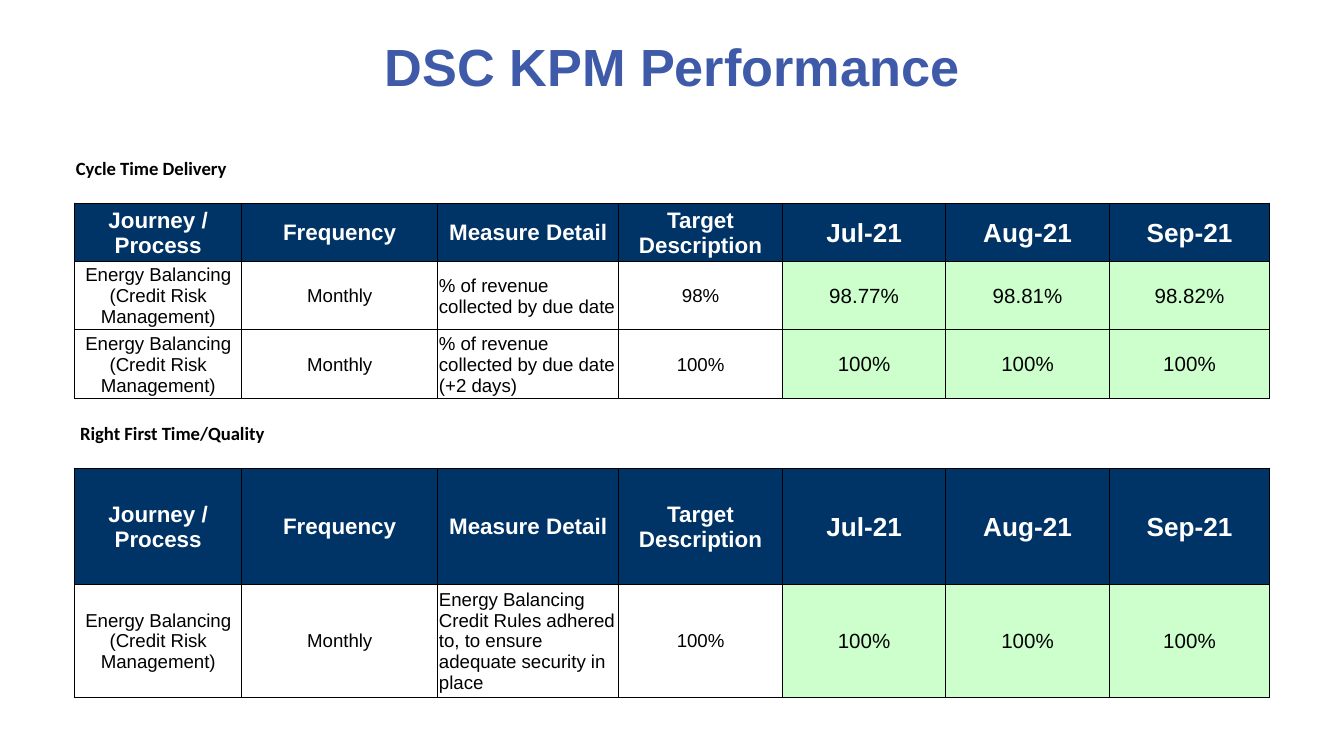
from lxml.etree import SubElement
from pptx import Presentation
from pptx.dml.color import RGBColor
from pptx.enum.text import MSO_ANCHOR as Anchor, PP_ALIGN as Align
from pptx.oxml.ns import qn
from pptx.util import Pt

BLUE = RGBColor(0x3E, 0x5A, 0xA8)
NAVY = RGBColor(0x00, 0x33, 0x66)
GREEN = RGBColor(0xCC, 0xFF, 0xCC)
WHITE = RGBColor(0xFF, 0xFF, 0xFF)
BLACK = RGBColor(0x00, 0x00, 0x00)

COLUMN_WIDTHS = [89.5, 105, 97, 87.75, 87.5, 87.75, 85.75]
FIRST_MONTH = 4
MEASURE = 2

HEADINGS = ["Journey / Process", "Frequency", "Measure Detail",
            "Target Description", "Jul-21", "Aug-21", "Sep-21"]
JOURNEY = ["Energy Balancing (Credit Risk Management)", "Monthly"]

ROWS = [
    ("label", 12.5, ["Cycle Time Delivery"]),
    ("space", 12.5, []),
    ("header", 31, HEADINGS),
    ("data", 36.5, JOURNEY + ["% of revenue collected by due date",
                              "98%", "98.77%", "98.81%", "98.82%"]),
    ("data", 36.5, JOURNEY + ["% of revenue collected by due date (+2 days)"]
     + ["100%"] * 4),
    ("space", 12.5, []),
    ("label", 12.5, [" Right First Time/Quality"]),
    ("space", 12.5, []),
    ("header", 61.75, HEADINGS),
    ("data", 60.5, JOURNEY + ["Energy Balancing Credit Rules adhered to, "
                              "to ensure adequate security in place"]
     + ["100%"] * 4),
]


class KpmSlide:
    def __init__(self, page):
        self.page = page

    def set_text(self, frame, text, size, color, bold, font="Arial", align=Align.CENTER):
        para = frame.paragraphs[0]
        para.text = text
        para.alignment = align
        para.font.name = font
        para.font.size = Pt(size)
        para.font.bold = bold
        para.font.color.rgb = color

    def title(self, text):
        box = self.page.shapes.add_textbox(Pt(36), Pt(10), Pt(648), Pt(50.5))
        frame = box.text_frame
        frame.word_wrap = True
        frame.vertical_anchor = Anchor.MIDDLE
        self.set_text(frame, text, 28, BLUE, True)

    def borders(self, cell, visible):
        properties = cell._tc.get_or_add_tcPr()
        for side, shown in zip(("L", "R", "T", "B"), visible):
            line = SubElement(properties, qn(f"a:ln{side}"), w=str(Pt(0.5)))
            if shown:
                fill = SubElement(line, qn("a:solidFill"))
                SubElement(fill, qn("a:srgbClr"), val=str(BLACK))
            else:
                SubElement(line, qn("a:noFill"))

    def cell(self, cell, kind, column, text):
        cell.margin_left = cell.margin_right = cell.margin_top = Pt(0.7)
        cell.margin_bottom = 0
        cell.vertical_anchor = Anchor.BOTTOM if kind == "label" else Anchor.MIDDLE
        month = column >= FIRST_MONTH
        frame = cell.text_frame
        if kind == "header":
            self.set_text(frame, text, 14 if month else 12, WHITE, True)
        elif kind == "data":
            align = Align.LEFT if column == MEASURE else Align.CENTER
            self.set_text(frame, text, 11 if month else 10, BLACK, False, align=align)
        elif text:
            self.set_text(frame, text, 10, BLACK, True, "Calibri", Align.LEFT)
        else:
            SubElement(frame.paragraphs[0]._p, qn("a:endParaRPr"), sz="800")
        if kind in ("label", "space"):
            cell.fill.background()
        else:
            cell.fill.solid()
            cell.fill.fore_color.rgb = (
                NAVY if kind == "header" else GREEN if month else WHITE)

    def table(self, left, top, widths, rows):
        heights = [height for _, height, _ in rows]
        table = self.page.shapes.add_table(
            len(rows), len(widths), Pt(left), Pt(top),
            Pt(sum(widths)), Pt(sum(heights))).table
        table.first_row = table.horz_banding = False
        for column, width in zip(table.columns, widths):
            column.width = Pt(width)
        ruled = [kind in ("header", "data") for kind, _, _ in rows] + [False]
        for index, (kind, height, texts) in enumerate(rows):
            table.rows[index].height = Pt(height)
            own = ruled[index]
            visible = (own, own, own or ruled[index - 1], own or ruled[index + 1])
            for column in range(len(widths)):
                cell = table.cell(index, column)
                self.borders(cell, visible)
                text = texts[column] if column < len(texts) else ""
                self.cell(cell, kind, column, text)
        return table


def main():
    deck = Presentation()
    deck.slide_width, deck.slide_height = Pt(720), Pt(405)
    slide = KpmSlide(deck.slides.add_slide(deck.slide_layouts[6]))
    slide.title("DSC KPM Performance")
    table = slide.table(40, 83.75, COLUMN_WIDTHS, ROWS)
    table.cell(6, 0).merge(table.cell(6, 1))
    deck.save("out.pptx")


if __name__ == "__main__":
    main()
